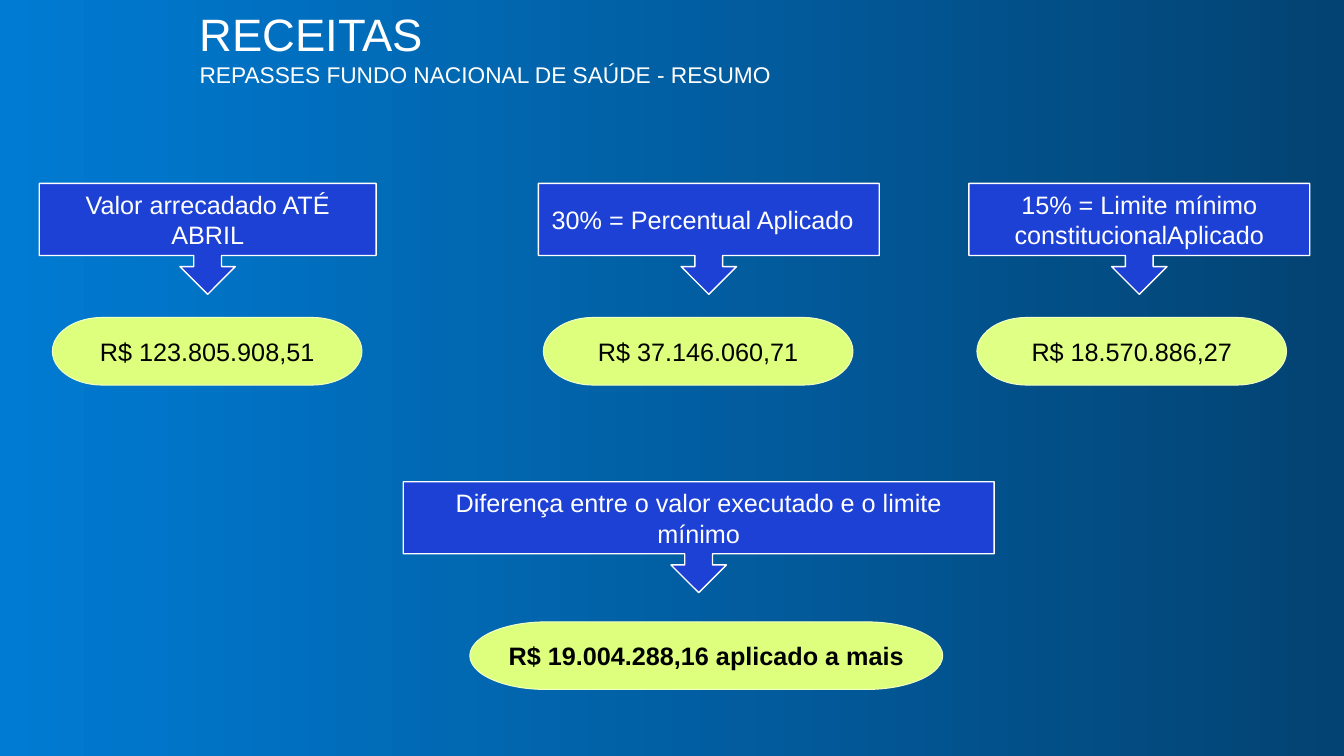
import pptx
import pptx.dml.color
import pptx.enum.shapes
import pptx.enum.text
import pptx.util

Inches = pptx.util.Inches
Pt = pptx.util.Pt
RGBColor = pptx.dml.color.RGBColor
Shape = pptx.enum.shapes.MSO_SHAPE
Align = pptx.enum.text.PP_ALIGN
Anchor = pptx.enum.text.MSO_ANCHOR
AutoSize = pptx.enum.text.MSO_AUTO_SIZE

WHITE = RGBColor(0xFF, 0xFF, 0xFF)
BLACK = RGBColor(0, 0, 0)
BLUE = RGBColor(0x1D, 0x41, 0xD5)
LIME = RGBColor(0xDE, 0xFF, 0x7D)
PALE_LIME = RGBColor(0xE0, 0xFF, 0x85)
LIME_EDGE = RGBColor(0xF0, 0xFF, 0xC2)
SKY = RGBColor(0x00, 0x7B, 0xD3)
NAVY = RGBColor(0x03, 0x43, 0x73)


def apply(target, values):
    for name, value in values.items():
        setattr(target, name, value)


class RevenueSlide:
    font_name = "Arial"
    text_size = 18

    def __init__(self, presentation):
        self.slide = presentation.slides.add_slide(presentation.slide_layouts[5])

    def background(self, start, end):
        fill = self.slide.background.fill
        fill.gradient()
        fill.gradient_angle = 0
        for stop, color, position in zip(fill.gradient_stops, (start, end), (0, 1)):
            stop.color.rgb = color
            stop.position = position

    def format_font(self, font, color, size, bold=False):
        apply(font, {"name": self.font_name, "size": Pt(size), "bold": bold})
        font.color.rgb = color

    def title(self, heading, subtitle):
        shape = self.slide.shapes.title
        apply(shape, {"left": Inches(1.88), "top": Inches(0),
                      "width": Inches(10.5), "height": Inches(0.94)})
        frame = shape.text_frame
        apply(frame, {"auto_size": AutoSize.NONE, "word_wrap": True,
                      "vertical_anchor": Anchor.MIDDLE})
        paragraph = frame.paragraphs[0]
        paragraph.alignment = Align.LEFT
        for text, size in ((heading, 32.4), (subtitle, 16.2)):
            if paragraph.runs:
                paragraph.add_line_break()
            run = paragraph.add_run()
            run.text = text
            self.format_font(run.font, WHITE, size)

    def box(self, kind, place, text, fill, edge, edge_width, color, wrap, bold=False):
        shape = self.slide.shapes.add_shape(kind, *map(Inches, place))
        shape.shadow.inherit = False
        shape.fill.solid()
        shape.fill.fore_color.rgb = fill
        shape.line.color.rgb = edge
        shape.line.width = Pt(edge_width)
        frame = shape.text_frame
        apply(frame, {"word_wrap": wrap, "vertical_anchor": Anchor.MIDDLE})
        paragraph = frame.paragraphs[0]
        paragraph.alignment = Align.CENTER
        run = paragraph.add_run()
        run.text = text
        self.format_font(run.font, color, self.text_size, bold)
        return shape

    def callout(self, left, top, width, text, right_inset=0.1):
        shape = self.box(Shape.DOWN_ARROW_CALLOUT, (left, top, width, 1.1), text,
                         BLUE, WHITE, 1, WHITE, True)
        shape.text_frame.margin_right = Inches(right_inset)

    def amount(self, left, top, width, text, fill=LIME, bold=False):
        self.box(Shape.FLOWCHART_TERMINATOR, (left, top, width, 0.67), text,
                 fill, LIME_EDGE, 0.75, BLACK, False, bold)


def main():
    presentation = pptx.Presentation()
    presentation.slide_width = Inches(13.33)
    presentation.slide_height = Inches(7.5)
    revenue = RevenueSlide(presentation)
    revenue.background(SKY, NAVY)
    revenue.title("RECEITAS", "REPASSES FUNDO NACIONAL DE SAÚDE - RESUMO")

    columns = (
        (0.39, 3.34, "Valor arrecadado ATÉ ABRIL", 0.1, 0.52, "R$ 123.805.908,51", LIME),
        (5.34, 3.38, "30% = Percentual Aplicado", 0.22, 5.39, "R$ 37.146.060,71", LIME),
        (9.61, 3.38, "15% = Limite mínimo constitucionalAplicado", 0.1, 9.69,
         "R$ 18.570.886,27", PALE_LIME),
    )
    for left, width, label, inset, amount_left, value, fill in columns:
        revenue.callout(left, 1.82, width, label, inset)
        revenue.amount(amount_left, 3.15, 3.07, value, fill)

    revenue.callout(4, 4.78, 5.86, "Diferença entre o valor executado e o limite mínimo")
    revenue.amount(4.66, 6.17, 4.69, "R$ 19.004.288,16 aplicado a mais", bold=True)
    presentation.save("out.pptx")


if __name__ == "__main__":
    main()
